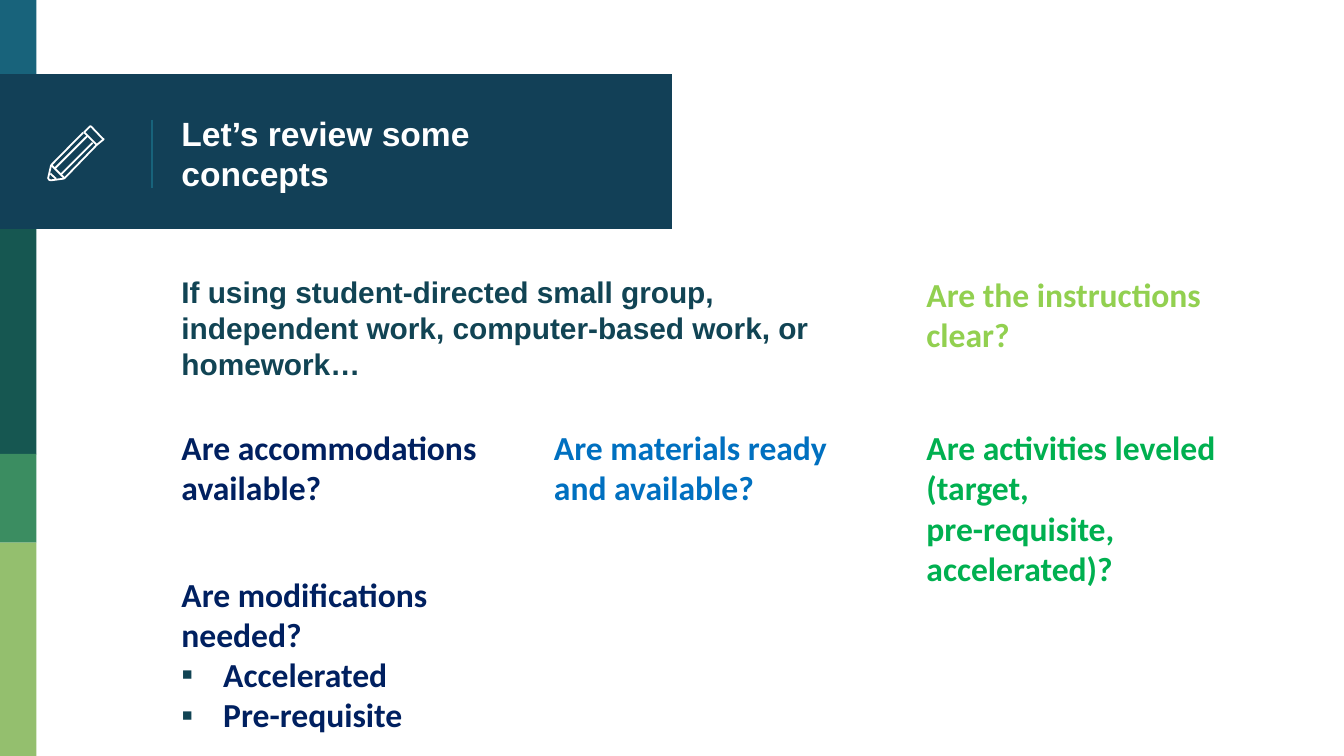
from lxml import etree
from pptx import Presentation
from pptx.dml.color import RGBColor
from pptx.enum.shapes import MSO_CONNECTOR, MSO_SHAPE
from pptx.enum.text import MSO_ANCHOR, MSO_AUTO_SIZE, PP_ALIGN
from pptx.oxml.ns import qn
from pptx.util import Cm, Pt

RECTANGLE = MSO_SHAPE.RECTANGLE
STRAIGHT = MSO_CONNECTOR.STRAIGHT
TOP, MIDDLE = MSO_ANCHOR.TOP, MSO_ANCHOR.MIDDLE
LEFT = PP_ALIGN.LEFT
NO_FIT = MSO_AUTO_SIZE.NONE

TITLE_ONLY = 5
WHITE, TEAL, INK, NAVY = "FFFFFF", "18637B", "114454", "002060"

# Three equal columns (cm)
COLUMN_LEFT, COLUMN_STEP, COLUMN_WIDTH = 3.18, 7.04, 6.71
BOX_HEIGHT = 3.63
ROW_TOPS = (4.93, 7.82, 10.59)

# Side strip: top, height, colour (cm)
STRIP_WIDTH = 0.69
STRIP = (
    (0, 1.47, TEAL),
    (4.32, 4.27, "165751"),
    (8.58, 1.68, "3B8D61"),
    (10.26, 4.03, "94BF6E"),
)

# Pencil icon, in hundredths of a centimetre
PENCIL_OUTLINES = (
    # Eraser end
    ([(194, 262), (174, 241), (172, 239), (170, 239), (168, 241),
      (159, 250), (183, 274), (194, 265), (196, 263)], True),
    # Barrel and point
    ([(157, 251), (97, 312), (96, 315), (91, 337), (93, 340),
      (96, 341), (119, 338), (122, 337), (183, 274)], False),
)
PENCIL_LINES = (
    (175, 270, 115, 330),
    (104, 318, 165, 257),
    (106, 338, 95, 328),
    (97, 312, 121, 336),
)


def color(value):
    return RGBColor.from_string(value)


def add_block(page, left, top, width, height, fill):
    block = page.shapes.add_shape(
        RECTANGLE, Cm(left), Cm(top), Cm(width), Cm(height))
    block.shadow.inherit = False
    block.fill.solid()
    block.fill.fore_color.rgb = color(fill)
    block.line.fill.background()


def add_line(page, x1, y1, x2, y2, stroke, weight):
    line = page.shapes.add_connector(
        STRAIGHT, Cm(x1), Cm(y1), Cm(x2), Cm(y2))
    line.line.color.rgb = color(stroke)
    line.line.width = Pt(weight)
    etree.SubElement(line._element.spPr, qn("a:effectLst"))


def add_pencil(page):
    for points, closed in PENCIL_OUTLINES:
        builder = page.shapes.build_freeform(*points[0], scale=Cm(0.01))
        builder.add_line_segments(points[1:], close=closed)
        outline = builder.convert_to_shape()
        outline.shadow.inherit = False
        outline.fill.background()
        outline.line.color.rgb = color(WHITE)
        outline.line.width = Pt(0.96)
    for ends in PENCIL_LINES:
        add_line(page, *(value / 100 for value in ends), WHITE, 0.96)


def add_bullet(para):
    properties = para._p.get_or_add_pPr()
    properties.set("marL", str(Cm(0.79)))
    properties.set("indent", str(-Cm(0.79)))
    bullet_color = etree.SubElement(properties, qn("a:buClr"))
    etree.SubElement(bullet_color, qn("a:srgbClr"), val=INK)
    etree.SubElement(properties, qn("a:buFont"), typeface="Arial")
    etree.SubElement(properties, qn("a:buChar"), char="▪")


def write_text(box, lines, fill, font="Calibri", size=18, anchor=TOP,
               bullets_from=None):
    frame = box.text_frame
    frame.word_wrap = True
    frame.auto_size = NO_FIT
    frame.vertical_anchor = anchor
    frame.margin_left = frame.margin_right = Cm(0.25)
    frame.margin_top = frame.margin_bottom = Cm(0.25)
    for index, line in enumerate(lines):
        para = frame.add_paragraph() if index else frame.paragraphs[0]
        para.alignment = LEFT
        para.line_spacing = Pt(size * 1.2)
        para.space_before = Pt(0)
        if bullets_from is not None and index >= bullets_from:
            add_bullet(para)
        span = para.add_run()
        span.text = line
        span.font.name = font
        span.font.size = Pt(size)
        span.font.bold = True
        span.font.color.rgb = color(fill)


def add_text(page, column, row, lines, fill, width=COLUMN_WIDTH, **style):
    box = page.shapes.add_textbox(
        Cm(COLUMN_LEFT + column * COLUMN_STEP), Cm(ROW_TOPS[row]),
        Cm(width), Cm(BOX_HEIGHT))
    write_text(box, lines, fill, **style)


def add_title(page, text):
    title = page.shapes.title
    title.left, title.top = Cm(COLUMN_LEFT), Cm(1.47)
    title.width, title.height = Cm(8.8), Cm(2.84)
    write_text(title, [text], WHITE, font="Arial", anchor=MIDDLE)
    # Bring the title in front of the banner
    page.shapes._spTree.append(title._element)


def main():
    deck = Presentation()
    deck.slide_width, deck.slide_height = Cm(25.4), Cm(14.29)
    page = deck.slides.add_slide(deck.slide_layouts[TITLE_ONLY])

    # Side strip and title banner
    for top, height, fill in STRIP:
        add_block(page, 0, top, STRIP_WIDTH, height, fill)
    add_block(page, 0, 1.4, 12.7, 2.93, "124057")
    add_line(page, 2.87, 2.26, 2.87, 3.56, TEAL, 0.75)
    add_title(page, "Let’s review some concepts")
    add_pencil(page)

    # Introduction
    add_text(page, 0, 0,
             ["If using student-directed small group, independent work, "
              "computer-based work, or homework…"],
             INK, width=13.23, font="Arial", size=16)

    # Questions
    add_text(page, 2, 0, ["Are the instructions clear?"], "92D050")
    add_text(page, 0, 1, ["Are accommodations available?"], NAVY)
    add_text(page, 1, 1, ["Are materials ready and available?"], "0070C0")
    add_text(page, 2, 1, ["Are activities leveled (target,",
                          "pre-requisite, accelerated)?"], "00B050")
    add_text(page, 0, 2, ["Are modifications needed?", "Accelerated",
                          "Pre-requisite"], NAVY, bullets_from=1)

    deck.save("out.pptx")


if __name__ == "__main__":
    main()
